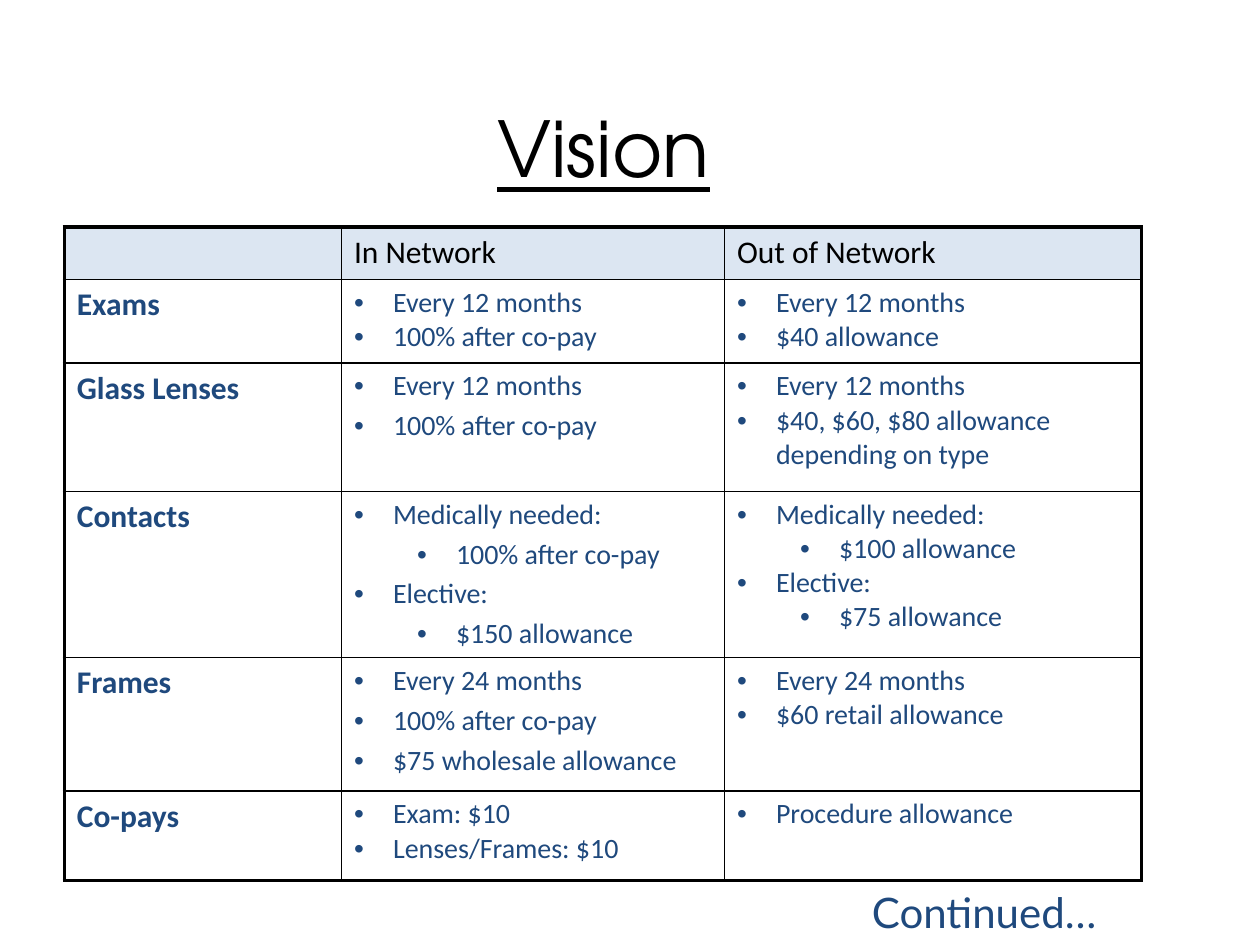
from dataclasses import dataclass

from lxml.etree import SubElement
from pptx import Presentation
from pptx.dml.color import RGBColor
from pptx.enum.text import MSO_ANCHOR as Anchor, PP_ALIGN as Align
from pptx.oxml import parse_xml
from pptx.oxml.ns import nsdecls, qn
from pptx.util import Inches, Pt

BLACK = RGBColor(0x00, 0x00, 0x00)
NAVY = RGBColor(0x1F, 0x49, 0x7D)
PALE_BLUE = RGBColor(0xDC, 0xE6, 0xF2)
WIDTH, HEIGHT = Inches(10), Inches(7.5)
COLUMNS = (0.22, 0.304, 0.331)
ROWS = (0.056, 0.088, 0.136, 0.176, 0.141, 0.095)
HEADERS = ("", "In Network", "Out of Network")
THIN, THICK = Pt(1), Pt(2.25)


@dataclass(frozen=True)
class Item:
    text: str
    level: int = 0


@dataclass(frozen=True)
class Benefit:
    name: str
    in_network: tuple[Item, ...]
    out_of_network: tuple[Item, ...]
    in_network_gap: float = 0


YEARLY = Item("Every 12 months")
BIENNIAL = Item("Every 24 months")
FULL = Item("100% after co-pay")
MEDICAL = Item("Medically needed:")
ELECTIVE = Item("Elective:")

BENEFITS = (
    Benefit("Exams", (YEARLY, FULL), (YEARLY, Item("$40 allowance"))),
    Benefit(
        "Glass Lenses",
        (YEARLY, FULL),
        (YEARLY, Item("$40, $60, $80 allowance depending on type")),
        in_network_gap=3.2,
    ),
    Benefit(
        "Contacts",
        (MEDICAL, Item(FULL.text, 1), ELECTIVE, Item("$150 allowance", 1)),
        (MEDICAL, Item("$100 allowance", 1), ELECTIVE, Item("$75 allowance", 1)),
        in_network_gap=3.2,
    ),
    Benefit(
        "Frames",
        (BIENNIAL, FULL, Item("$75 wholesale allowance")),
        (BIENNIAL, Item("$60 retail allowance")),
        in_network_gap=3.2,
    ),
    Benefit(
        "Co-pays",
        (Item("Exam: $10"), Item("Lenses/Frames: $10")),
        (Item("Procedure allowance"),),
    ),
)


def write(para, text: str, *, size: float, color: RGBColor, font: str = "Calibri",
          bold: bool = False, underline: bool = False, align=None) -> None:
    para.alignment = align
    span = para.add_run()
    span.text = text
    span.font.name = font
    span.font.size = Pt(size)
    span.font.bold = bold
    span.font.underline = underline
    span.font.color.rgb = color


def add_label(page, left: float, top: float, width: float, height: float,
              text: str, *, anchor=Anchor.TOP, **style) -> None:
    box = page.shapes.add_textbox(int(left * WIDTH), int(top * HEIGHT),
                                  int(width * WIDTH), int(height * HEIGHT))
    box.text_frame.word_wrap = True
    box.text_frame.vertical_anchor = anchor
    write(box.text_frame.paragraphs[0], text, **style)


def write_bullets(cell, items: tuple[Item, ...], gap: float = 0) -> None:
    frame = cell.text_frame
    for index, item in enumerate(items):
        para = frame.add_paragraph() if index else frame.paragraphs[0]
        para.level = item.level
        para.space_before = Pt(gap if index else 0)
        props = para._p.get_or_add_pPr()
        props.set("marL", str(Inches(0.31 + 0.5 * item.level)))
        props.set("indent", str(Inches(-0.31)))
        SubElement(props, qn("a:buFont")).set("typeface", "Arial")
        SubElement(props, qn("a:buChar")).set("char", "•")
        write(para, item.text, size=16, color=NAVY)


def set_borders(cell, row: int, column: int) -> None:
    outer = {
        "L": column == 0,
        "R": column == len(COLUMNS) - 1,
        "T": row == 0,
        "B": row == len(ROWS) - 1,
    }
    props = cell._tc.get_or_add_tcPr()
    for index, (side, is_outer) in enumerate(outer.items()):
        line = parse_xml(
            f'<a:ln{side} {nsdecls("a")} w="{THICK if is_outer else THIN}">'
            f'<a:solidFill><a:srgbClr val="{BLACK}"/></a:solidFill></a:ln{side}>'
        )
        props.insert(index, line)


def add_benefit_table(page, left: float, top: float) -> None:
    table = page.shapes.add_table(
        len(ROWS), len(COLUMNS), int(left * WIDTH), int(top * HEIGHT),
        int(sum(COLUMNS) * WIDTH), int(sum(ROWS) * HEIGHT)).table
    table.first_row = table.horz_banding = False
    for column, share in zip(table.columns, COLUMNS):
        column.width = int(share * WIDTH)
    for row, share in zip(table.rows, ROWS):
        row.height = int(share * HEIGHT)
    for row in range(len(ROWS)):
        for column in range(len(COLUMNS)):
            cell = table.cell(row, column)
            if row == 0:
                cell.fill.solid()
                cell.fill.fore_color.rgb = PALE_BLUE
            else:
                cell.fill.background()
            set_borders(cell, row, column)
    for column, header in enumerate(HEADERS):
        if header:
            write(table.cell(0, column).text_frame.paragraphs[0], header,
                  size=18, color=BLACK)
    for row, benefit in enumerate(BENEFITS, start=1):
        write(table.cell(row, 0).text_frame.paragraphs[0], benefit.name,
              size=18, color=NAVY, bold=True)
        write_bullets(table.cell(row, 1), benefit.in_network, benefit.in_network_gap)
        write_bullets(table.cell(row, 2), benefit.out_of_network)


def main() -> None:
    deck = Presentation()
    deck.slide_width, deck.slide_height = WIDTH, HEIGHT
    page = deck.slides.add_slide(deck.slide_layouts[6])
    add_label(page, 0.033, 0.11, 0.892, 0.09, "Vision", anchor=Anchor.MIDDLE,
              size=44, color=BLACK, font="TeX Gyre Adventor", underline=True,
              align=Align.CENTER)
    add_benefit_table(page, 0.051, 0.24)
    add_label(page, 0.613, 0.932, 0.267, 0.067, "Continued…",
              size=24, color=NAVY, font="Lato", align=Align.RIGHT)
    deck.save("out.pptx")


if __name__ == "__main__":
    main()
